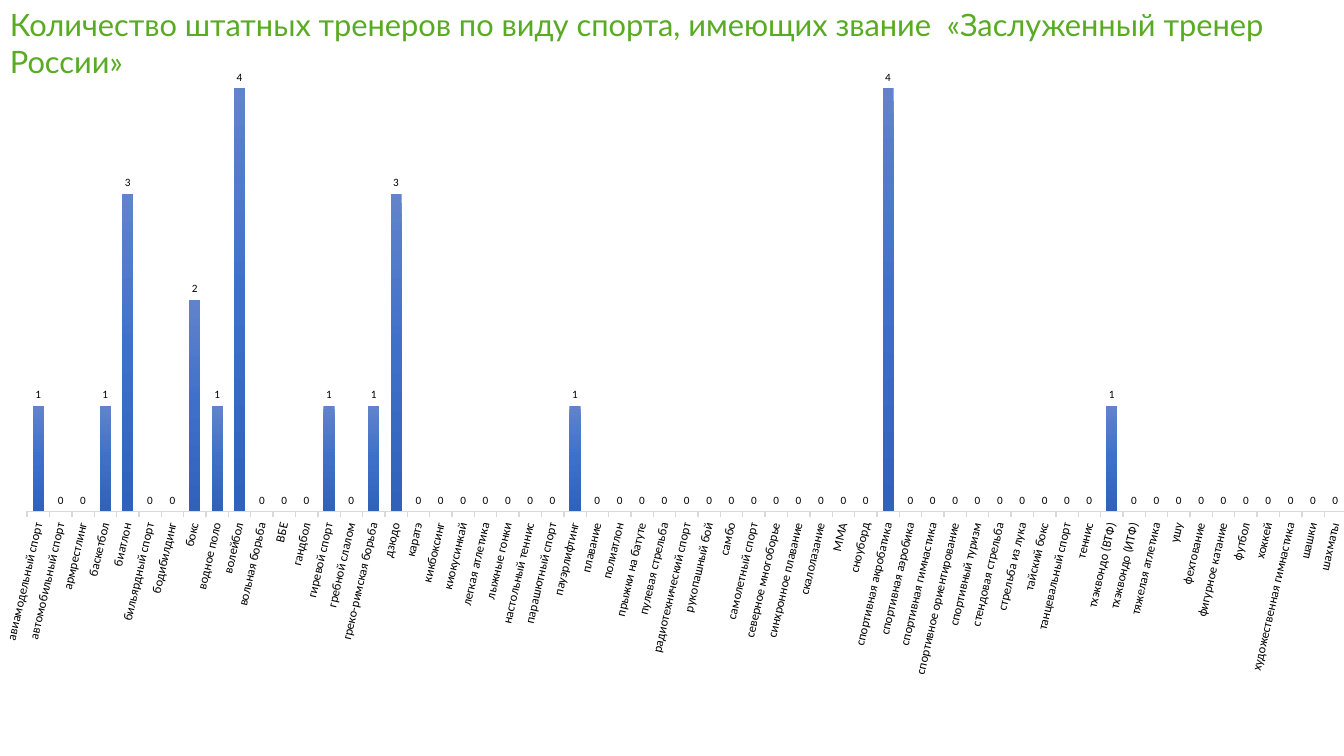
from copy import deepcopy
from dataclasses import dataclass

from lxml.etree import SubElement
from pptx import Presentation
from pptx.chart.data import CategoryChartData
from pptx.dml.color import RGBColor
from pptx.enum.chart import XL_CHART_TYPE, XL_LABEL_POSITION, XL_TICK_LABEL_POSITION, XL_TICK_MARK
from pptx.enum.text import MSO_ANCHOR, MSO_AUTO_SIZE
from pptx.oxml.ns import qn
from pptx.util import Inches, Pt


@dataclass(frozen=True)
class Theme:
    title_font: str = "Lato"
    chart_font: str = "Calibri"
    title_size: int = 22
    chart_size: int = 10
    axis_size: int = 9
    label_size: int = 8
    title_color: str = "59AB23"
    text_color: str = "000000"
    axis_color: str = "D9D9D9"
    bar_gradient: tuple = ((0, "6183CB"), (0.5, "3E70CA"), (1, "3062BB"))


THEME = Theme()
WIDTH, HEIGHT = Inches(13.33), Inches(7.5)

TITLE = "Количество штатных тренеров по виду спорта, имеющих звание  «Заслуженный тренер России»"

SPORTS = [
    "авиамодельный спорт", "автомобильный спорт", "армрестлинг", "баскетбол", "биатлон",
    "бильярдный спорт", "бодибилдинг", "бокс", "водное поло", "волейбол", "вольная борьба",
    "ВБЕ", "гандбол", "гиревой спорт", "гребной слалом", "греко-римская борьба", "дзюдо",
    "каратэ", "кикбоксинг", "киокусинкай", "легкая атлетика", "лыжные гонки",
    "настольный теннис", "парашютный спорт", "пауэрлифтинг", "плавание", "полиатлон",
    "прыжки на батуте", "пулевая стрельба", "радиотехнический спорт", "рукопашный бой",
    "самбо", "самолетный спорт", "северное многоборье", "синхронное плавание",
    "скалолазание", "ММА", "сноуборд", "спортивная акробатика", "спортивная аэробика",
    "спортивная гимнастика", "спортивное ориентирование", "спортивный туризм",
    "стендовая стрельба", "стрельба из лука", "тайский бокс", "танцевальный спорт",
    "теннис", "тхэквондо (ВТФ)", "тхэквондо (ИТФ)", "тяжелая атлетика", "ушу",
    "фехтование", "фигурное катание", "футбол", "хоккей", "художественная гимнастика",
    "шашки", "шахматы",
]

# Sports that are not listed here have no honoured coaches
COACHES = {
    "авиамодельный спорт": 1, "баскетбол": 1, "биатлон": 3, "бокс": 2, "водное поло": 1,
    "волейбол": 4, "гиревой спорт": 1, "греко-римская борьба": 1, "дзюдо": 3,
    "пауэрлифтинг": 1, "спортивная акробатика": 4, "тхэквондо (ВТФ)": 1,
}


def style_font(font, name, size, color):
    font.name = name
    font.size = Pt(size)
    font.color.rgb = RGBColor.from_string(color)


def fill_gradient(fill, stops):
    """Fill from top to bottom with any number of (share, colour) stops."""
    fill.gradient()
    fill.gradient_angle = 270
    stop_list = fill._fill._gradFill.gsLst
    while len(stop_list) < len(stops):
        stop_list.append(deepcopy(stop_list[0]))
    for stop, (share, color) in zip(fill.gradient_stops, stops):
        stop.position = share
        stop.color.rgb = RGBColor.from_string(color)


def set_plot_area(chart, **shares):
    """Fix the inner plot area as shares (x, y, w, h) of the chart."""
    plot_area = chart._chartSpace.chart.plotArea
    layout = plot_area.find(qn("c:layout"))
    if layout is None:
        layout = SubElement(plot_area, qn("c:layout"))
        plot_area.insert(0, layout)
    manual = SubElement(layout, qn("c:manualLayout"))
    SubElement(manual, qn("c:layoutTarget")).set("val", "inner")
    for side in "xy":
        SubElement(manual, qn(f"c:{side}Mode")).set("val", "edge")
    for side, share in shares.items():
        SubElement(manual, qn(f"c:{side}")).set("val", str(share))


def style_category_axis(axis):
    axis.major_tick_mark = XL_TICK_MARK.OUTSIDE
    axis.tick_label_position = XL_TICK_LABEL_POSITION.LOW
    axis.format.line.color.rgb = RGBColor.from_string(THEME.axis_color)
    axis.format.line.width = Pt(1)
    style_font(axis.tick_labels.font, THEME.chart_font, THEME.axis_size, THEME.text_color)
    # Slant the names and show every one of them
    body = axis._element.find(qn("c:txPr")).find(qn("a:bodyPr"))
    body.set("rot", str(-77 * 60000))
    body.set("vert", "horz")
    skip = SubElement(axis._element, qn("c:tickLblSkip"))
    skip.set("val", "1")
    axis._element.find(qn("c:noMultiLvlLbl")).addprevious(skip)


def style_value_axis(axis):
    axis.minimum_scale, axis.maximum_scale = 0, 4.5
    axis.has_major_gridlines = False
    axis.visible = False


def add_column_chart(page, left, top, width, height):
    data = CategoryChartData(number_format="General")
    data.categories = SPORTS
    data.add_series("Series 1", [COACHES.get(sport, 0) for sport in SPORTS])
    chart = page.shapes.add_chart(
        XL_CHART_TYPE.COLUMN_CLUSTERED, left, top, width, height, data).chart
    chart.has_legend = False
    chart.has_title = False
    style_font(chart.font, THEME.chart_font, THEME.chart_size, THEME.text_color)
    set_plot_area(chart, x=0.016, y=0.042, w=0.983, h=0.636)
    style_category_axis(chart.category_axis)
    style_value_axis(chart.value_axis)

    # Columns and their values
    plot = chart.plots[0]
    plot.gap_width = 100
    plot.vary_by_categories = False
    fill_gradient(plot.series[0].format.fill, THEME.bar_gradient)
    labels = plot.series[0].data_labels
    labels.show_value = True
    labels.position = XL_LABEL_POSITION.OUTSIDE_END
    style_font(labels.font, THEME.chart_font, THEME.label_size, THEME.text_color)


def add_title(page, text, left, top, width, height):
    frame = page.shapes.add_textbox(left, top, width, height).text_frame
    frame.word_wrap = True
    frame.auto_size = MSO_AUTO_SIZE.SHAPE_TO_FIT_TEXT
    frame.vertical_anchor = MSO_ANCHOR.TOP
    frame.text = text
    span = frame.paragraphs[0].runs[0]
    style_font(span.font, THEME.title_font, THEME.title_size, THEME.title_color)


def main():
    deck = Presentation()
    deck.slide_width, deck.slide_height = WIDTH, HEIGHT
    page = deck.slides.add_slide(deck.slide_layouts[6])
    margin = Inches(0.04)
    add_column_chart(page, margin, margin, WIDTH, int(HEIGHT * 0.99))
    add_title(page, TITLE, 0, Inches(0.01), WIDTH - margin, Inches(0.47))
    deck.save("out.pptx")


if __name__ == "__main__":
    main()
